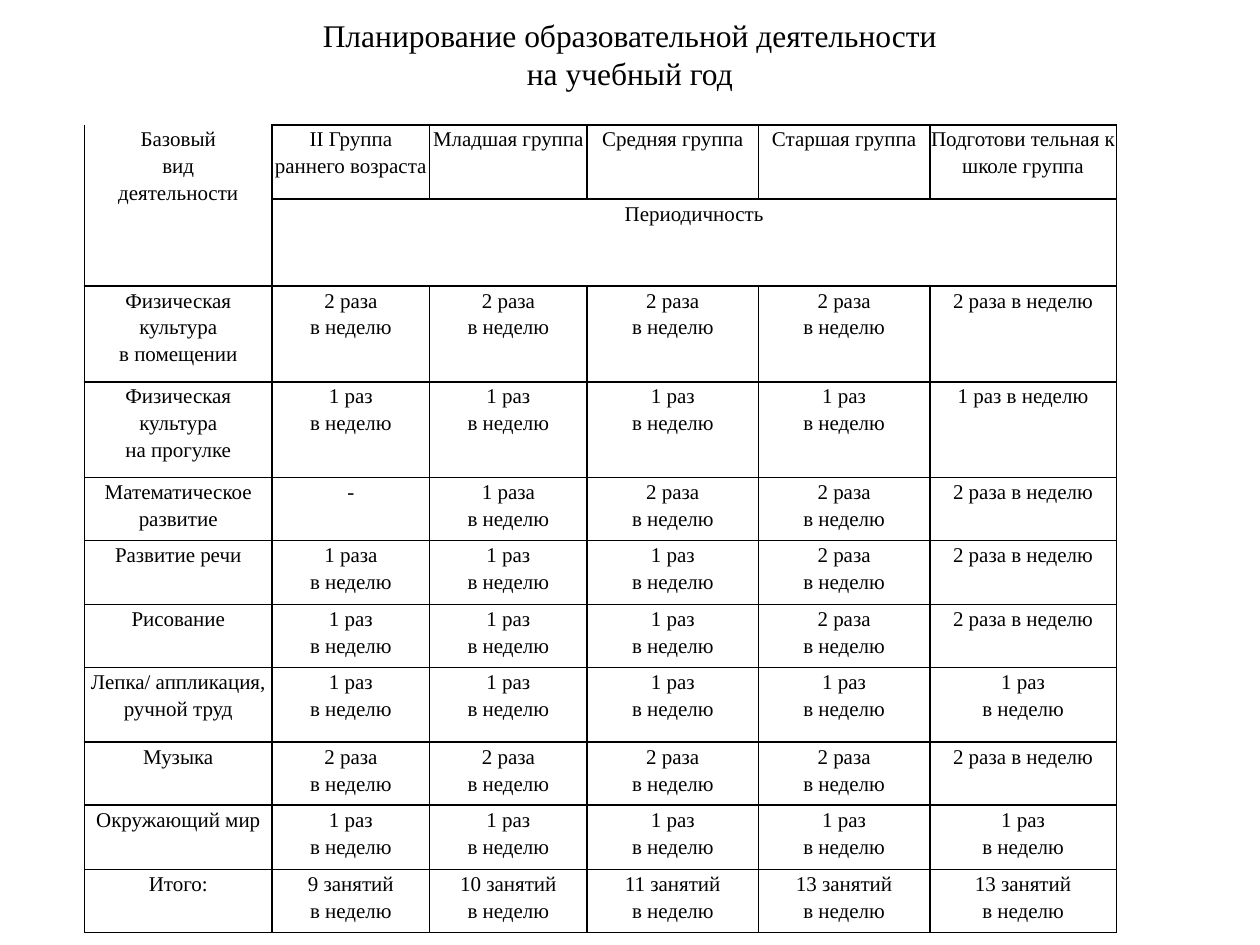
from lxml import etree
from pptx import Presentation
from pptx import util as u
from pptx.dml.color import RGBColor
from pptx.enum import text
from pptx.oxml.ns import qn

BLACK = "000000"


def style_text(frame, size, spacing, **layout):
    """Format every paragraph and set the frame's attributes."""
    for key, value in layout.items():
        setattr(frame, key, value)
    for line in frame.paragraphs:
        line.alignment = text.PP_ALIGN.CENTER
        line.line_spacing = spacing
        for run in line.runs:
            run.font.name = "Times New Roman"
            run.font.size = u.Pt(size)
            run.font.color.rgb = RGBColor.from_string(BLACK)


def set_borders(cell, hidden=()):
    """Draw 1 pt borders, leaving out the hidden sides."""
    properties = cell._tc.get_or_add_tcPr()
    for position, side in enumerate(("lnL", "lnR", "lnT", "lnB")):
        border = etree.Element(qn(f"a:{side}"), w=str(u.Pt(1)))
        if side in hidden:
            etree.SubElement(border, qn("a:noFill"))
        else:
            fill = etree.SubElement(border, qn("a:solidFill"))
            etree.SubElement(fill, qn("a:srgbClr"), val=BLACK)
        properties.insert(position, border)


deck = Presentation()
deck.slide_width, deck.slide_height = u.Inches(10), u.Inches(7.5)
slide = deck.slides.add_slide(deck.slide_layouts[6])

# Heading
heading = slide.shapes.add_textbox(
    u.Inches(0.5), u.Inches(0.12), u.Inches(9), u.Inches(0.61)
).text_frame
heading.text = "Планирование образовательной деятельности\vна учебный год"
style_text(heading, 18, 1.0, word_wrap=True, margin_top=0, margin_bottom=0,
           vertical_anchor=text.MSO_ANCHOR.MIDDLE)

# Plan content: activity, row height, sessions per group
once, twice = "1 раз", "2 раза"
activities = [
    ("Физическая культура\nв помещении", 0.76, [twice] * 5),
    ("Физическая культура\nна прогулке", 0.76, [once] * 5),
    ("Математическое развитие", 0.5, ["-", "1 раза", twice, twice, twice]),
    ("Развитие речи", 0.51, ["1 раза", once, once, twice, twice]),
    ("Рисование", 0.5, [once, once, once, twice, twice]),
    ("Лепка/ аппликация,\nручной труд", 0.59, [once] * 5),
    ("Музыка", 0.5, [twice] * 5),
    ("Окружающий мир", 0.51, [once] * 5),
    ("Итого:", 0.5, [f"{count} занятий" for count in (9, 10, 11, 13, 13)]),
]
# Activities whose last column keeps the frequency on one line
one_line = {0, 1, 2, 3, 4, 6}

plan_rows = [
    ["Базовый\nвид\nдеятельности", "II Группа раннего возраста", "Младшая группа",
     "Средняя группа", "Старшая группа", "Подготови тельная к школе группа"],
    ["", "Периодичность", "", "", "", ""],
]
for index, (activity, _, sessions) in enumerate(activities):
    weekly = [count if count == "-" else f"{count}\nв неделю" for count in sessions]
    if index in one_line:
        weekly[-1] = weekly[-1].replace("\n", " ")
    plan_rows.append([activity] + weekly)

# Table grid; the second row grows to hold the merged first cell
widths = [1.49, 1.25, 1.25, 1.36, 1.36, 1.48]
heights = [0.59, 0.25] + [height for _, height, _ in activities]
plan = slide.shapes.add_table(
    len(heights), len(widths), u.Inches(0.67), u.Inches(0.99),
    u.Inches(sum(widths)), u.Inches(sum(heights))
).table
plan.first_row = plan.horz_banding = False
for column, width in zip(plan.columns, widths):
    column.width = u.Inches(width)
for row, height in zip(plan.rows, heights):
    row.height = u.Inches(height)
plan.cell(0, 0).merge(plan.cell(1, 0))
plan.cell(1, 1).merge(plan.cell(1, 5))

# Table cells
cell_layout = {"margin_left": u.Pt(0.5), "margin_right": u.Pt(0.5),
               "margin_top": 0, "margin_bottom": 0}
for row_index, entries in enumerate(plan_rows):
    for column_index, entry in enumerate(entries):
        cell = plan.cell(row_index, column_index)
        for key, value in cell_layout.items():
            setattr(cell, key, value)
        cell.fill.background()
        if entry:
            cell.text_frame.text = entry
            style_text(cell.text_frame, 12, 1.15)
        set_borders(cell, ("lnT",) if row_index == column_index == 0 else ())

deck.save("out.pptx")
